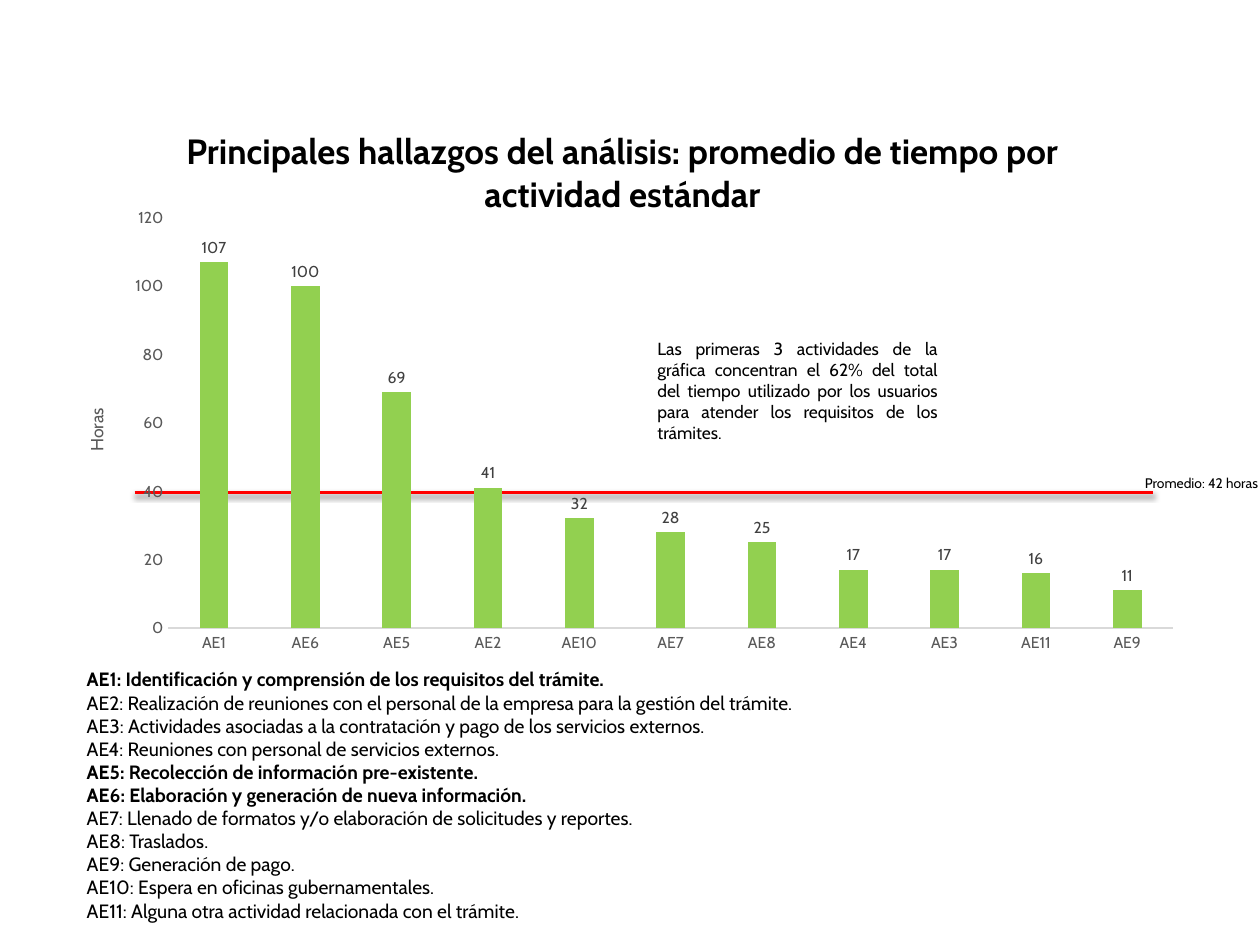
from lxml import etree
from pptx import Presentation
from pptx.chart.data import CategoryChartData
from pptx.dml.color import RGBColor as RGB
from pptx.enum.chart import XL_CHART_TYPE as ChartType
from pptx.enum.chart import XL_LABEL_POSITION as LabelPosition
from pptx.enum.chart import XL_TICK_MARK as TickMark
from pptx.enum.shapes import MSO_CONNECTOR as Connector
from pptx.enum.text import MSO_ANCHOR as Anchor
from pptx.enum.text import PP_ALIGN as Align
from pptx.oxml import parse_xml
from pptx.oxml.ns import nsdecls, qn
from pptx.util import Pt

# Content
TITLE = "Principales hallazgos del análisis: promedio de tiempo por actividad estándar"
NOTE = ("Las primeras 3 actividades de la gráfica concentran el 62% del total del tiempo "
        "utilizado por los usuarios para atender los requisitos de los trámites.")
AVERAGE = "Promedio: 42 horas"
AXIS_TITLE = "Horas"
HOURS = {"AE1": 107, "AE6": 100, "AE5": 69, "AE2": 41, "AE10": 32, "AE7": 28,
         "AE8": 25, "AE4": 17, "AE3": 17, "AE11": 16, "AE9": 11}
ACTIVITIES = [
    "Identificación y comprensión de los requisitos del trámite.",
    "Realización de reuniones con el personal de la empresa para la gestión del trámite.",
    "Actividades asociadas a la contratación y pago de los servicios externos.",
    "Reuniones con personal de servicios externos.",
    "Recolección de información pre-existente.",
    "Elaboración y generación de nueva información.",
    "Llenado de formatos y/o elaboración de solicitudes y reportes.",
    "Traslados.",
    "Generación de pago.",
    "Espera en oficinas gubernamentales.",
    "Alguna otra actividad relacionada con el trámite.",
]
TOP_ACTIVITIES = list(HOURS)[:3]

THEME = {
    "font": "Cabin",
    "text": RGB(0, 0, 0), "axis": RGB(0x59, 0x59, 0x59), "label": RGB(0x40, 0x40, 0x40),
    "axis_line": RGB(0xD9, 0xD9, 0xD9), "bar": RGB(0x92, 0xD0, 0x50),
    "average": RGB(0xFF, 0, 0),
    "title_size": 20, "legend_size": 11, "note_size": 10, "average_size": 7.9,
    "chart_size": 10, "tick_size": 9,
}

# Left, top, width, height in points
TITLE_BOX = (62, 79.2, 587.5, 38.2)
LEGEND_BOX = (42.5, 378, 476, 154)
NOTE_BOX = (368.6, 189.4, 174.2, 67.7)
AVERAGE_BOX = (643.7, 267.8, 85.7, 26.6)
CHART_BOX = (31, 113.8, 652.3, 263.5)
AVERAGE_LINE = (77, 281.5, 658.8, 281.5)
PLOT_AREA = {"x": 0.1, "y": 0.04, "w": 0.88, "h": 0.89}


def style_font(font, size, color, bold=False):
    font.name, font.size, font.bold = THEME["font"], Pt(size), bold
    font.color.rgb = color


def add_text(slide, box, lines, size, align=Align.LEFT, anchor=Anchor.TOP):
    """Add a text box; lines are (text, bold) pairs."""
    frame = slide.shapes.add_textbox(*map(Pt, box)).text_frame
    frame.word_wrap = True
    frame.vertical_anchor = anchor
    frame.text = "\n".join(text for text, _ in lines)
    for paragraph, (_, bold) in zip(frame.paragraphs, lines):
        paragraph.alignment = align
        for run in paragraph.runs:
            style_font(run.font, size, THEME["text"], bold)


def add_average_line(slide):
    line = slide.shapes.add_connector(Connector.STRAIGHT, *map(Pt, AVERAGE_LINE))
    line.line.color.rgb = THEME["average"]
    line.line.width = Pt(2)
    line._element.spPr.append(parse_xml(
        f'<a:effectLst {nsdecls("a")}><a:outerShdw blurRad="{Pt(3.1)}" dist="{Pt(1.6)}" '
        'dir="5400000" rotWithShape="0"><a:srgbClr val="000000"><a:alpha val="38000"/>'
        '</a:srgbClr></a:outerShdw></a:effectLst>'))


def set_plot_area(chart):
    plot_area = chart._chartSpace.chart.plotArea
    for old in plot_area.findall(qn("c:layout")):
        plot_area.remove(old)
    layout = etree.Element(qn("c:layout"))
    manual = etree.SubElement(layout, qn("c:manualLayout"))
    settings = {"layoutTarget": "inner", "xMode": "edge", "yMode": "edge", **PLOT_AREA}
    for name, value in settings.items():
        etree.SubElement(manual, qn(f"c:{name}")).set("val", str(value))
    plot_area.insert(0, layout)


def add_hours_chart(slide):
    data = CategoryChartData()
    data.categories = list(HOURS)
    data.add_series(AXIS_TITLE, list(HOURS.values()))
    chart = slide.shapes.add_chart(
        ChartType.COLUMN_CLUSTERED, *map(Pt, CHART_BOX), data).chart
    chart.has_legend = chart.has_title = False
    style_font(chart.font, THEME["chart_size"], THEME["text"])
    set_plot_area(chart)

    # Axes
    category_axis, value_axis = chart.category_axis, chart.value_axis
    for axis in (category_axis, value_axis):
        axis.major_tick_mark = axis.minor_tick_mark = TickMark.NONE
        axis.has_major_gridlines = False
        style_font(axis.tick_labels.font, THEME["tick_size"], THEME["axis"])
    category_axis.format.line.color.rgb = THEME["axis_line"]
    category_axis.format.line.width = Pt(0.75)
    value_axis.format.line.fill.background()
    value_axis.minimum_scale, value_axis.maximum_scale = 0, 120
    value_axis.major_unit = 20
    frame = value_axis.axis_title.text_frame
    frame.text = AXIS_TITLE
    style_font(frame.paragraphs[0].runs[0].font, THEME["chart_size"], THEME["axis"])

    # Bars and their values
    plot = chart.plots[0]
    plot.gap_width, plot.overlap, plot.vary_by_categories = 219, -27, False
    series = plot.series[0]
    series.format.fill.solid()
    series.format.fill.fore_color.rgb = THEME["bar"]
    labels = series.data_labels
    labels.show_value = True
    labels.position = LabelPosition.OUTSIDE_END
    style_font(labels.font, THEME["tick_size"], THEME["label"])


def main():
    presentation = Presentation()
    presentation.slide_width, presentation.slide_height = Pt(720), Pt(540)
    slide = presentation.slides.add_slide(presentation.slide_layouts[6])

    add_text(slide, TITLE_BOX, [(TITLE, True)], THEME["title_size"],
             Align.CENTER, Anchor.MIDDLE)
    codes = [f"AE{number}" for number in range(1, len(ACTIVITIES) + 1)]
    legend = [(f"{code}: {activity}", code in TOP_ACTIVITIES)
              for code, activity in zip(codes, ACTIVITIES)]
    add_text(slide, LEGEND_BOX, legend, THEME["legend_size"])
    add_text(slide, NOTE_BOX, [(NOTE, False)], THEME["note_size"], Align.JUSTIFY)
    add_average_line(slide)
    add_text(slide, AVERAGE_BOX, [(AVERAGE, False)], THEME["average_size"], Align.CENTER)
    add_hours_chart(slide)
    presentation.save("out.pptx")


if __name__ == "__main__":
    main()
